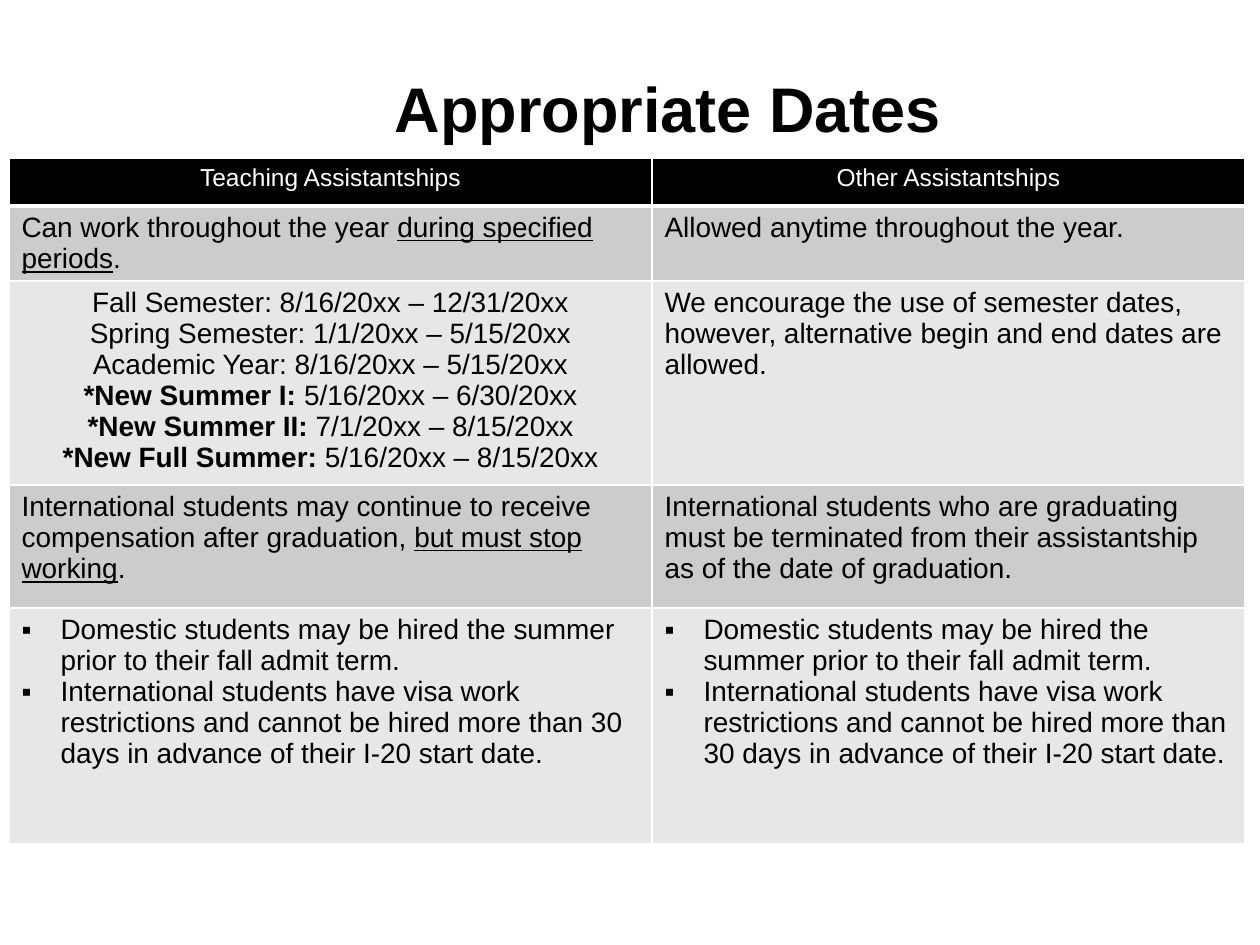
from lxml import etree
from pptx import Presentation
from pptx.dml.color import RGBColor
from pptx.enum.text import MSO_ANCHOR, PP_ALIGN
from pptx.oxml.ns import qn
from pptx.util import Emu, Pt

CENTER, LEFT = PP_ALIGN.CENTER, PP_ALIGN.LEFT
MIDDLE = MSO_ANCHOR.MIDDLE
BLACK = RGBColor(0x00, 0x00, 0x00)
WHITE = RGBColor(0xFF, 0xFF, 0xFF)
DARK = RGBColor(0xCC, 0xCC, 0xCC)
LIGHT = RGBColor(0xE7, 0xE7, 0xE7)
FONT = "Arial"
PX = 914400 / 126

COLS = [643, 593]
ROWS = [48, 75, 204, 123, 236]
FILLS = [BLACK, DARK, LIGHT, DARK, LIGHT]

# A cell is a list of paragraphs, a paragraph a list of (text, style) runs.
# Styles: "" plain, "b" bold, "u" underlined.
TERMS = [
    [("Fall Semester: 8/16/20xx – 12/31/20xx", "")],
    [("Spring Semester: 1/1/20xx – 5/15/20xx", "")],
    [("Academic Year: 8/16/20xx – 5/15/20xx", "")],
    [("*New Summer I: ", "b"), ("5/16/20xx – 6/30/20xx", "")],
    [("*New Summer II: ", "b"), ("7/1/20xx – 8/15/20xx", "")],
    [("*New Full Summer: ", "b"), ("5/16/20xx – 8/15/20xx", "")],
]
HIRING = [
    [("Domestic students may be hired the summer prior to their fall admit "
      "term.", "")],
    [("International students have visa work restrictions and cannot be hired "
      "more than 30 days in advance of their I-20 start date.", "")],
]
CELLS = [
    [[[("Teaching Assistantships", "")]], [[("Other Assistantships", "")]]],
    [[[("Can work throughout the year ", ""),
       ("during specified periods", "u"), (".", "")]],
     [[("Allowed anytime throughout the year.", "")]]],
    [TERMS,
     [[("We encourage the use of semester dates, however, alternative begin "
        "and end dates are allowed.", "")]]],
    [[[("International students may continue to receive compensation after "
        "graduation, ", ""), ("but must stop working", "u"), (".", "")]],
     [[("International students who are graduating must be terminated from "
        "their assistantship as of the date of graduation.", "")]]],
    [HIRING, HIRING],
]


def px(n):
    return Emu(round(n * PX))


def edge(cell, side, width):
    """Draw a white border on one side (L, R, T or B) of a cell."""
    props = cell._tc.get_or_add_tcPr()
    line = etree.SubElement(props, qn("a:ln" + side), w=str(Pt(width)))
    fill = etree.SubElement(line, qn("a:solidFill"))
    etree.SubElement(fill, qn("a:srgbClr"), val=str(WHITE))


prs = Presentation()
prs.slide_width, prs.slide_height = px(1260), px(945)
slide = prs.slides.add_slide(prs.slide_layouts[5])

title = slide.shapes.title
title.left, title.top, title.width, title.height = map(px, (101, 47, 1134, 120))
frame = title.text_frame
frame.word_wrap = True
frame.vertical_anchor = MIDDLE
para = frame.paragraphs[0]
para.alignment = CENTER
run = para.add_run()
run.text = "Appropriate Dates"
run.font.name, run.font.size, run.font.bold = FONT, Pt(36), True
run.font.color.rgb = BLACK

table = slide.shapes.add_table(
    len(ROWS), len(COLS), px(9), px(158), px(sum(COLS)), px(sum(ROWS))).table
for col, width in zip(table.columns, COLS):
    col.width = px(width)
for row, height in zip(table.rows, ROWS):
    row.height = px(height)

for r, texts in enumerate(CELLS):
    head = r == 0
    for c, paras in enumerate(texts):
        cell = table.cell(r, c)
        for side in "LRTB":
            thick = (head and side == "B") or (r == 1 and side == "T")
            edge(cell, side, 3 if thick else 1)
        cell.fill.solid()
        cell.fill.fore_color.rgb = FILLS[r]
        frame = cell.text_frame
        for i, runs in enumerate(paras):
            para = frame.add_paragraph() if i else frame.paragraphs[0]
            para.alignment = CENTER if head or paras is TERMS else LEFT
            if paras is HIRING:
                props = para._p.get_or_add_pPr()
                props.set("marL", str(px(39)))
                props.set("indent", str(px(-39)))
                tint = etree.SubElement(props, qn("a:buClr"))
                etree.SubElement(tint, qn("a:srgbClr"), val=str(BLACK))
                etree.SubElement(props, qn("a:buFont"), typeface=FONT)
                etree.SubElement(props, qn("a:buChar"), char="▪")
            for text, style in runs:
                run = para.add_run()
                run.text = text
                font = run.font
                font.name, font.size = FONT, Pt(14 if head else 16)
                font.bold, font.underline = style == "b", style == "u"
                font.color.rgb = WHITE if head else BLACK

prs.save("out.pptx")
